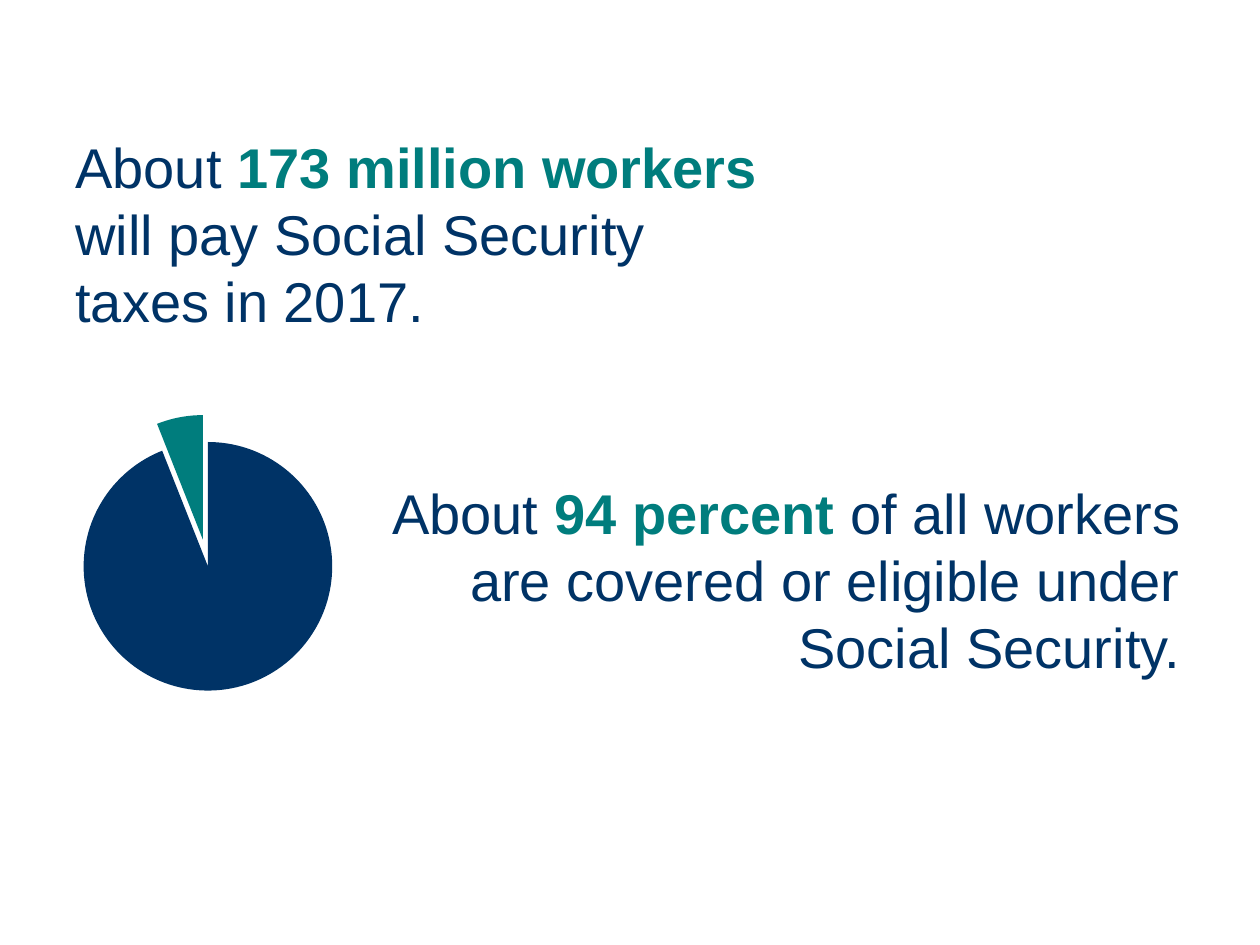
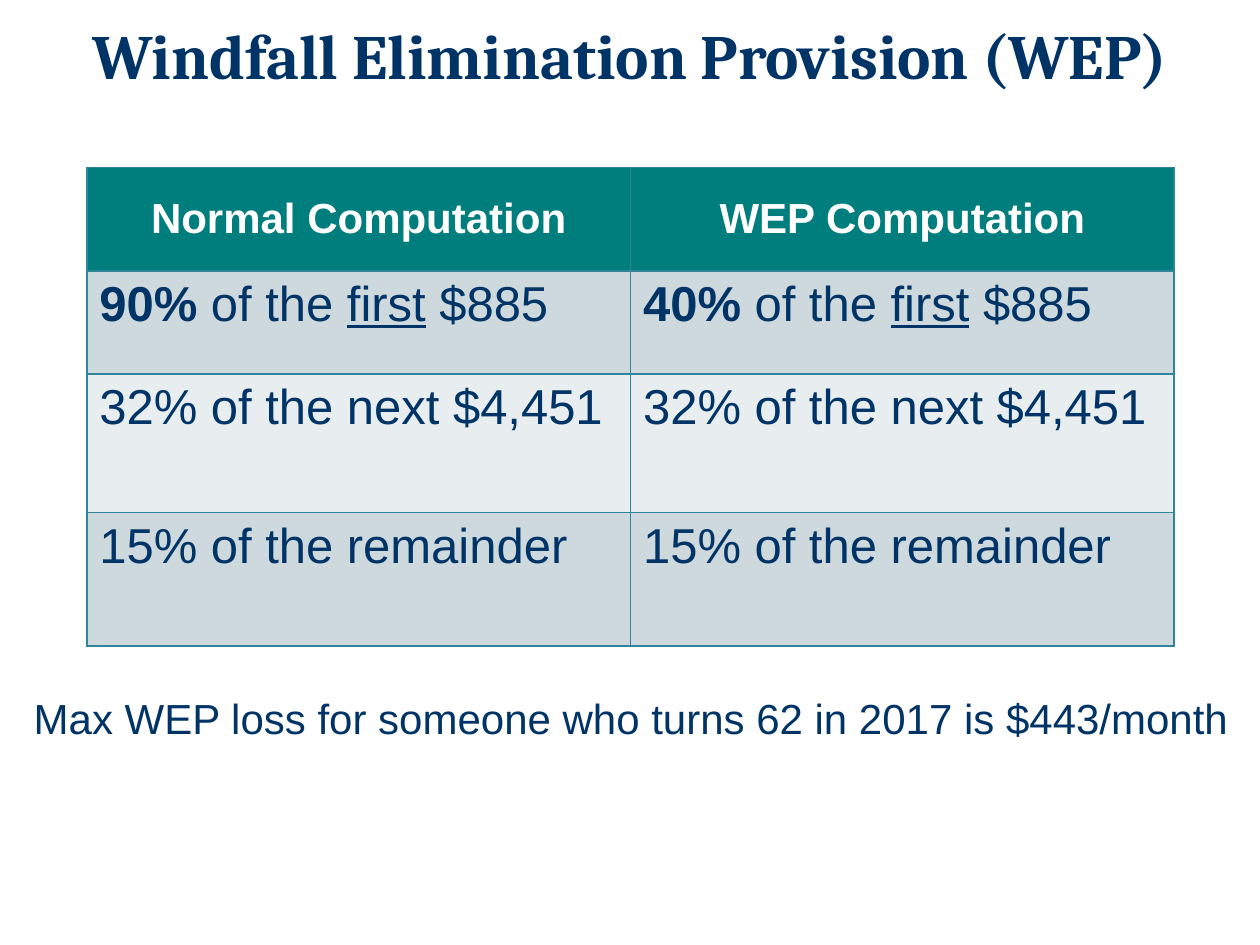
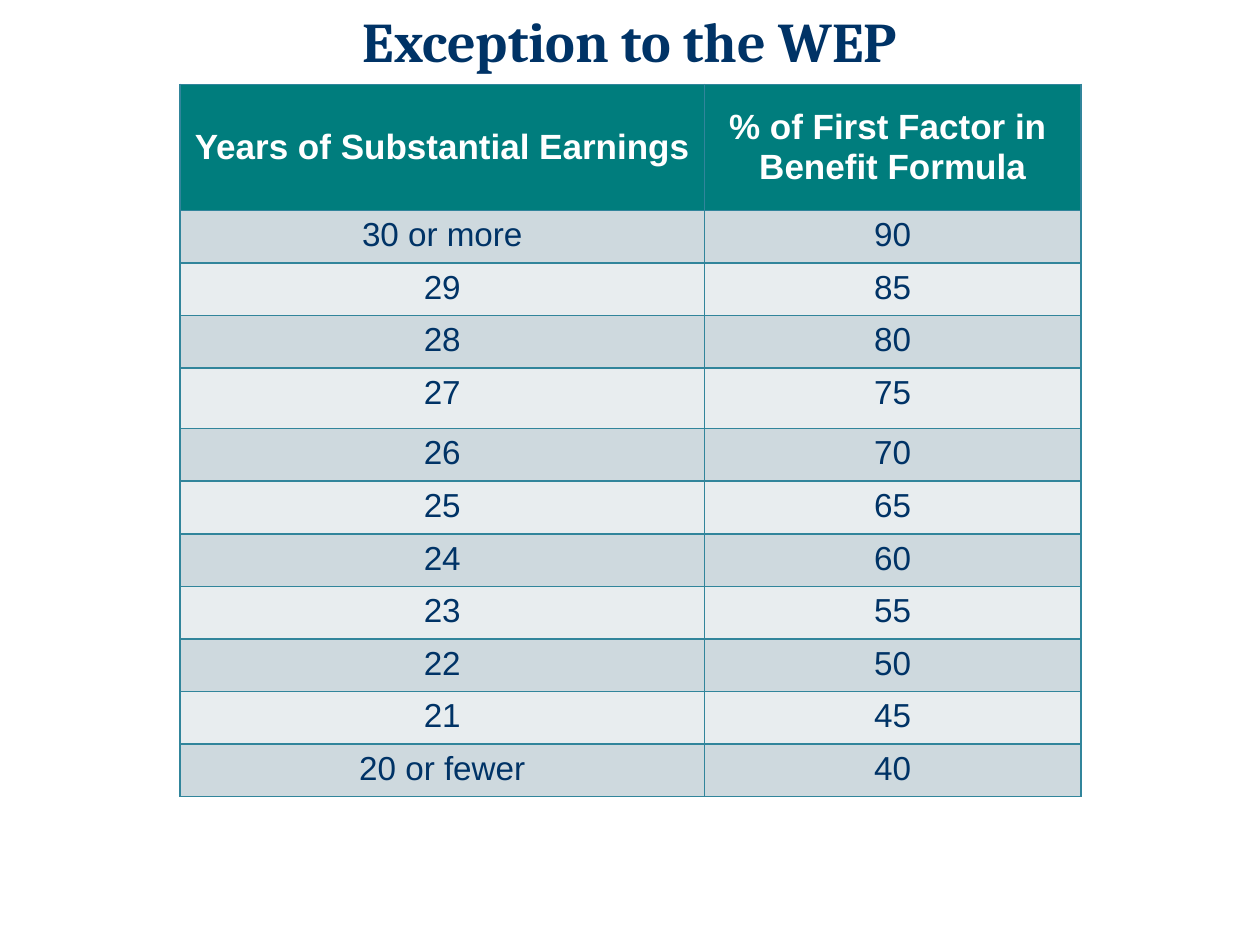
"""Build three slides on Social Security coverage and the Windfall Elimination Provision."""
from lxml.etree import SubElement
from pptx import Presentation
from pptx.chart.data import CategoryChartData
from pptx.dml.color import RGBColor
from pptx.enum.chart import XL_CHART_TYPE as ChartType
from pptx.enum.text import MSO_ANCHOR as Anchor, MSO_AUTO_SIZE as AutoSize, PP_ALIGN as Align
from pptx.oxml import parse_xml
from pptx.oxml.ns import nsdecls, qn
from pptx.util import Cm, Pt

NAVY = RGBColor(0x00, 0x33, 0x66)
TEAL = RGBColor(0x00, 0x7D, 0x7D)
WHITE = RGBColor(0xFF, 0xFF, 0xFF)
BORDER = RGBColor(0x31, 0x85, 0x9B)
BANDS = [RGBColor(0xCE, 0xD9, 0xDE), RGBColor(0xE8, 0xED, 0xEF)]
BODY_FONT, TITLE_FONT = "Arial", "Cambria"
TITLE_ONLY, BLANK = 5, 6

STATEMENTS = [
    ([("About ", ""), ("173 million workers ", "accent"),
      ("will pay Social Security taxes in 2017.", "")],
     (1.27, 2.54, 14.6, 4.37), Align.LEFT),
    ([("About ", ""), ("94 percent ", "accent"),
      ("of all workers are covered or eligible under Social Security.", "")],
     (6.78, 9.52, 17.27, 4.37), Align.RIGHT),
]
COVERAGE = {"1": 94, "2": 6}
COVERAGE_AREA = (-0.63, 7.62, 8.89, 8.46)
COVERAGE_PLOT = {"x": 0.128, "y": 0, "w": 0.829, "h": 0.898}
SLICES = [(NAVY, 0), (TEAL, 22)]
MAX_EXPLOSION = 47

FORMULA_ROWS = [
    ("Normal Computation", "WEP Computation"),
    tuple([(share, "bold"), (" of the ", ""), ("first", "underline"), (" $885", "")]
          for share in ("90%", "40%")),
    ("32% of the next $4,451",) * 2,
    ("15% of the remainder",) * 2,
]
WEP_NOTE = "Max WEP loss for someone who turns 62 in 2017 is $443/month"
EXCEPTION_ROWS = [
    ("Years of Substantial Earnings ", "% of First Factor in \nBenefit Formula"),
    ("30 or more", "90"),
    *((str(years), str(5 * years - 60)) for years in range(29, 20, -1)),
    ("20 or fewer", "40"),
]
EXCEPTION_HEIGHTS = [2.54] + [1.22 if row[0] == "27" else 1.06 for row in EXCEPTION_ROWS[1:]]


def write(frame, content, size, color=NAVY, align=Align.LEFT, bold=False, font_name=BODY_FONT):
    """Fill a text frame from a string or from (text, style) runs."""
    lines = [[(line, "")] for line in content.split("\n")] if isinstance(content, str) else [content]
    for index, runs in enumerate(lines):
        paragraph = frame.add_paragraph() if index else frame.paragraphs[0]
        paragraph.alignment = align
        font = paragraph.font
        font.name, font.size, font.bold = font_name, Pt(size), bold
        font.color.rgb = color
        for text, style in runs:
            run = paragraph.add_run()
            run.text = text
            if style in ("accent", "bold"):
                run.font.bold = True
            if style == "accent":
                run.font.color.rgb = TEAL
            if style == "underline":
                run.font.underline = True


def add_text(slide, area, content, size, align=Align.LEFT):
    """Add a wrapping text box."""
    frame = slide.shapes.add_textbox(*map(Cm, area)).text_frame
    frame.word_wrap = True
    write(frame, content, size, align=align)


def add_titled_slide(presentation, text, top, height, size):
    """Add a slide with a full-width centred title."""
    slide = presentation.slides.add_slide(presentation.slide_layouts[TITLE_ONLY])
    title = slide.shapes.title
    title.left, title.top = Cm(0), Cm(top)
    title.width, title.height = presentation.slide_width, Cm(height)
    frame = title.text_frame
    frame.auto_size, frame.vertical_anchor = AutoSize.NONE, Anchor.TOP
    write(frame, text, size, align=Align.CENTER, bold=True, font_name=TITLE_FONT)
    return slide


def add_borders(cell):
    """Draw a thin line on every side of a cell."""
    properties = cell._tc.get_or_add_tcPr()
    for side in ("lnL", "lnR", "lnT", "lnB"):
        line = SubElement(properties, qn(f"a:{side}"), w=str(Pt(1)))
        fill = SubElement(line, qn("a:solidFill"))
        SubElement(fill, qn("a:srgbClr"), val=str(BORDER))


def add_banded_table(slide, left, top, widths, heights, rows, header_size, body_size, body_align):
    """Add a table with a teal header and alternating body bands."""
    table = slide.shapes.add_table(len(rows), len(widths), Cm(left), Cm(top),
                                   Cm(sum(widths)), Cm(sum(heights))).table
    for column, width in zip(table.columns, widths):
        column.width = Cm(width)
    for row_index, (values, height) in enumerate(zip(rows, heights)):
        table.rows[row_index].height = Cm(height)
        header = row_index == 0
        for cell, content in zip(table.rows[row_index].cells, values):
            add_borders(cell)
            cell.fill.solid()
            cell.fill.fore_color.rgb = TEAL if header else BANDS[(row_index - 1) % 2]
            if header:
                cell.vertical_anchor = Anchor.MIDDLE
                write(cell.text_frame, content, header_size, WHITE, Align.CENTER, bold=True)
            else:
                write(cell.text_frame, content, body_size, align=body_align)


def explosion(value):
    """Return a chart element that pulls slices outwards."""
    return parse_xml(f'<c:explosion {nsdecls("c")} val="{value}"/>')


def add_coverage_pie(slide):
    """Add the pie of covered workers with its small slice pulled out."""
    data = CategoryChartData()
    data.categories = list(COVERAGE)
    data.add_series("Series 1", list(COVERAGE.values()))
    chart = slide.shapes.add_chart(ChartType.PIE, *map(Cm, COVERAGE_AREA), data).chart
    chart.has_title = chart.has_legend = False
    chart.font.name, chart.font.size = BODY_FONT, Pt(10)
    chart.font.color.rgb = NAVY
    plot = chart.plots[0]
    plot.vary_by_categories = True
    series = plot.series[0]
    for index, (color, offset) in enumerate(SLICES):
        fill = series.points[index].format.fill
        fill.solid()
        fill.fore_color.rgb = color
        point = series._element.findall(qn("c:dPt"))[index]
        point.find(qn("c:spPr")).addprevious(explosion(offset))
    series._element.find(qn("c:dPt")).addprevious(explosion(MAX_EXPLOSION))

    plot_area = chart._chartSpace.chart.plotArea
    for layout in plot_area.findall(qn("c:layout")):
        plot_area.remove(layout)
    modes = "".join(f'<c:{axis}Mode val="edge"/>' for axis in "xy")
    sizes = "".join(f'<c:{key} val="{value}"/>' for key, value in COVERAGE_PLOT.items())
    plot_area.insert(0, parse_xml(
        f'<c:layout {nsdecls("c")}><c:manualLayout><c:layoutTarget val="inner"/>'
        f'{modes}{sizes}</c:manualLayout></c:layout>'))


def main():
    """Build and save the presentation."""
    presentation = Presentation()
    presentation.slide_width, presentation.slide_height = Cm(25.4), Cm(19.05)

    slide = presentation.slides.add_slide(presentation.slide_layouts[BLANK])
    add_coverage_pie(slide)
    for runs, area, align in STATEMENTS:
        add_text(slide, area, runs, 32, align)

    slide = add_titled_slide(presentation, "Windfall Elimination Provision (WEP)", 0.2, 1.8, 36)
    add_banded_table(slide, 1.75, 3.38, [10.96] * 2, [2.08, 2.08, 2.79, 2.69],
                     FORMULA_ROWS, 24, 28, Align.LEFT)
    add_text(slide, (0.43, 13.84, 24.77, 1.27), WEP_NOTE, 24)

    slide = add_titled_slide(presentation, "Exception to the WEP", 0, 1.63, 32)
    add_banded_table(slide, 3.63, 1.7, [10.57, 7.59], EXCEPTION_HEIGHTS,
                     EXCEPTION_ROWS, 20, 19, Align.CENTER)

    presentation.save("out.pptx")


if __name__ == "__main__":
    main()
